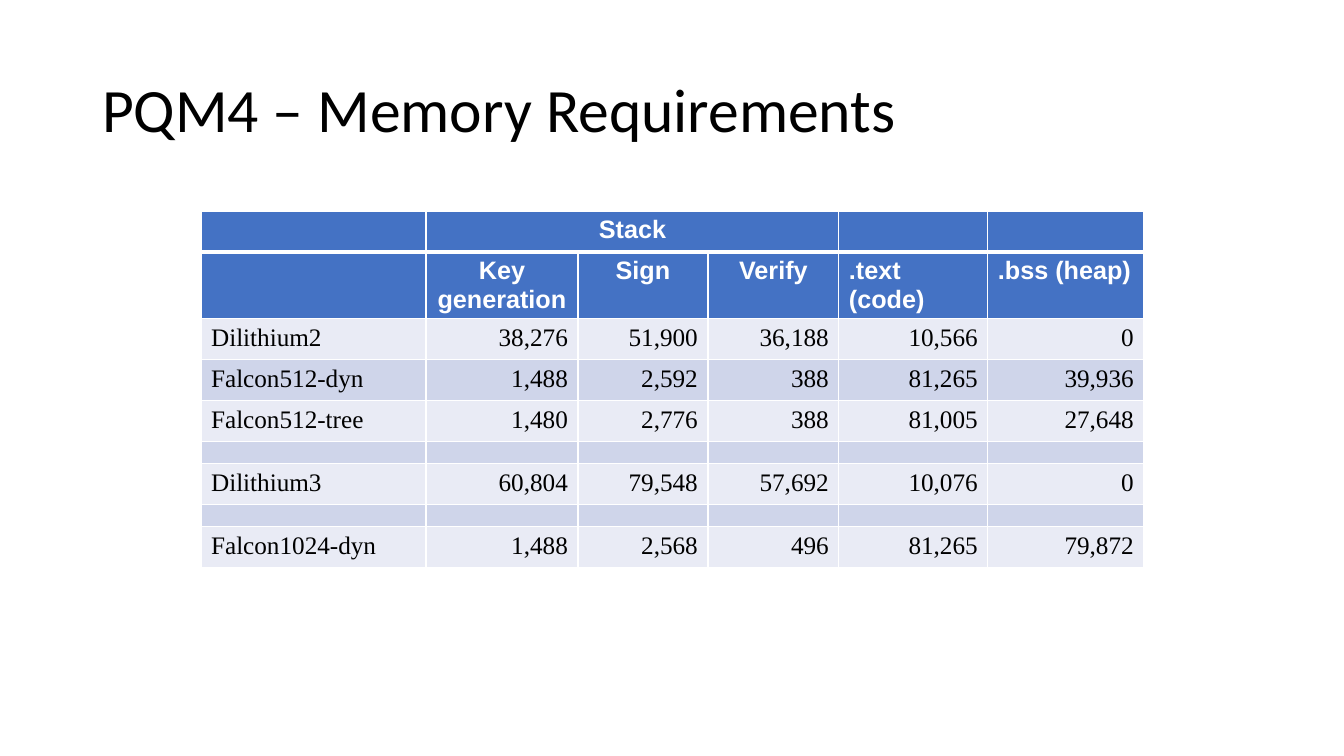
from dataclasses import dataclass

from lxml.etree import SubElement
from pptx import Presentation
from pptx.dml.color import RGBColor
from pptx.enum.text import MSO_ANCHOR, MSO_AUTO_SIZE, PP_ALIGN
from pptx.oxml.ns import qn
from pptx.util import Emu, Pt

EMU_PER_PX = 914400 / 100.8
WHITE, BLACK, BLUE = "FFFFFF", "000000", "4472C4"
BANDS = ("E9EBF5", "CFD5EA")
COLUMN_WIDTHS = (225, 152, 130, 131, 149, 156)
LEFT, CENTER, RIGHT = PP_ALIGN.LEFT, PP_ALIGN.CENTER, PP_ALIGN.RIGHT


@dataclass(frozen=True)
class TextStyle:
    font: str
    size: int
    color: str
    bold: bool = False


@dataclass(frozen=True)
class MemoryRow:
    texts: tuple[str, ...] = ("",) * len(COLUMN_WIDTHS)
    height: int = 41
    empty_size: int = 18


TITLE = TextStyle("Calibri", 44, BLACK)
HEADING = TextStyle("Arial", 18, WHITE, True)
BODY = TextStyle("Times New Roman", 18, BLACK)

HEADER_ROWS = (
    MemoryRow(("", "Stack", "", "", "", "")),
    MemoryRow(("", "Key generation", "Sign", "Verify", ".text (code)", ".bss (heap)")),
)
BODY_ROWS = (
    MemoryRow(("Dilithium2", "38,276", "51,900", "36,188", "10,566", "0")),
    MemoryRow(("Falcon512-dyn", "1,488", "2,592", "388", "81,265", "39,936")),
    MemoryRow(("Falcon512-tree", "1,480", "2,776", "388", "81,005", "27,648")),
    MemoryRow(height=15, empty_size=7),
    MemoryRow(("Dilithium3", "60,804", "79,548", "57,692", "10,076", "0")),
    MemoryRow(height=13, empty_size=7),
    MemoryRow(("Falcon1024-dyn", "1,488", "2,568", "496", "81,265", "79,872")),
)


def px(length: int) -> Emu:
    return Emu(round(length * EMU_PER_PX))


def rgb(color: str) -> RGBColor:
    return RGBColor.from_string(color)


def add_run(para, text: str, style: TextStyle) -> None:
    span = para.add_run()
    span.text = text
    span.font.name = style.font
    span.font.size = Pt(style.size)
    span.font.bold = style.bold
    span.font.color.rgb = rgb(style.color)


def set_borders(cell, top: int, bottom: int) -> None:
    """Draw white cell edges; top and bottom widths are in points."""
    properties = cell._tc.get_or_add_tcPr()
    for side, width in (("L", 1), ("R", 1), ("T", top), ("B", bottom)):
        line = SubElement(properties, qn(f"a:ln{side}"), w=str(Pt(width)))
        fill = SubElement(line, qn("a:solidFill"))
        SubElement(fill, qn("a:srgbClr"), val=WHITE)


def fill_cell(cell, text: str, style: TextStyle, alignment: PP_ALIGN,
              color: str, empty_size: int) -> None:
    cell.fill.solid()
    cell.fill.fore_color.rgb = rgb(color)
    para = cell.text_frame.paragraphs[0]
    if text:
        para.alignment = alignment
        add_run(para, text, style)
    else:
        SubElement(para._p, qn("a:endParaRPr"), sz=str(empty_size * 100))


def add_title(slide, text: str) -> None:
    title = slide.shapes.title
    title.left, title.top, title.width, title.height = map(px, (92, 40, 1159, 146))
    frame = title.text_frame
    frame.auto_size = MSO_AUTO_SIZE.NONE
    frame.word_wrap = True
    frame.vertical_anchor = MSO_ANCHOR.MIDDLE
    para = frame.paragraphs[0]
    para.alignment = LEFT
    para.line_spacing = 0.9
    add_run(para, text, TITLE)


def add_memory_table(slide) -> None:
    rows = HEADER_ROWS + BODY_ROWS
    frame = slide.shapes.add_table(
        len(rows), len(COLUMN_WIDTHS), px(201), px(211),
        px(sum(COLUMN_WIDTHS)), px(sum(row.height for row in rows)))
    table = frame.table
    table.horz_banding = False
    for column, width in zip(table.columns, COLUMN_WIDTHS):
        column.width = px(width)
    table.cell(0, 1).merge(table.cell(0, 3))

    for row_index, row in enumerate(rows):
        table.rows[row_index].height = px(row.height)
        is_header = row_index < len(HEADER_ROWS)
        style = HEADING if is_header else BODY
        color = BLUE if is_header else BANDS[(row_index - len(HEADER_ROWS)) % 2]
        for column_index, text in enumerate(row.texts):
            if is_header:
                alignment = CENTER if column_index < 4 else LEFT
            else:
                alignment = RIGHT if column_index else LEFT
            cell = table.cell(row_index, column_index)
            set_borders(cell, top=3 if row_index == 1 else 1,
                        bottom=3 if row_index == 0 else 1)
            fill_cell(cell, text, style, alignment, color, row.empty_size)


def main() -> None:
    deck = Presentation()
    deck.slide_width, deck.slide_height = px(1344), px(756)
    page = deck.slides.add_slide(deck.slide_layouts.get_by_name("Title Only"))
    add_title(page, "PQM4 – Memory Requirements")
    add_memory_table(page)
    deck.save("out.pptx")


if __name__ == "__main__":
    main()
